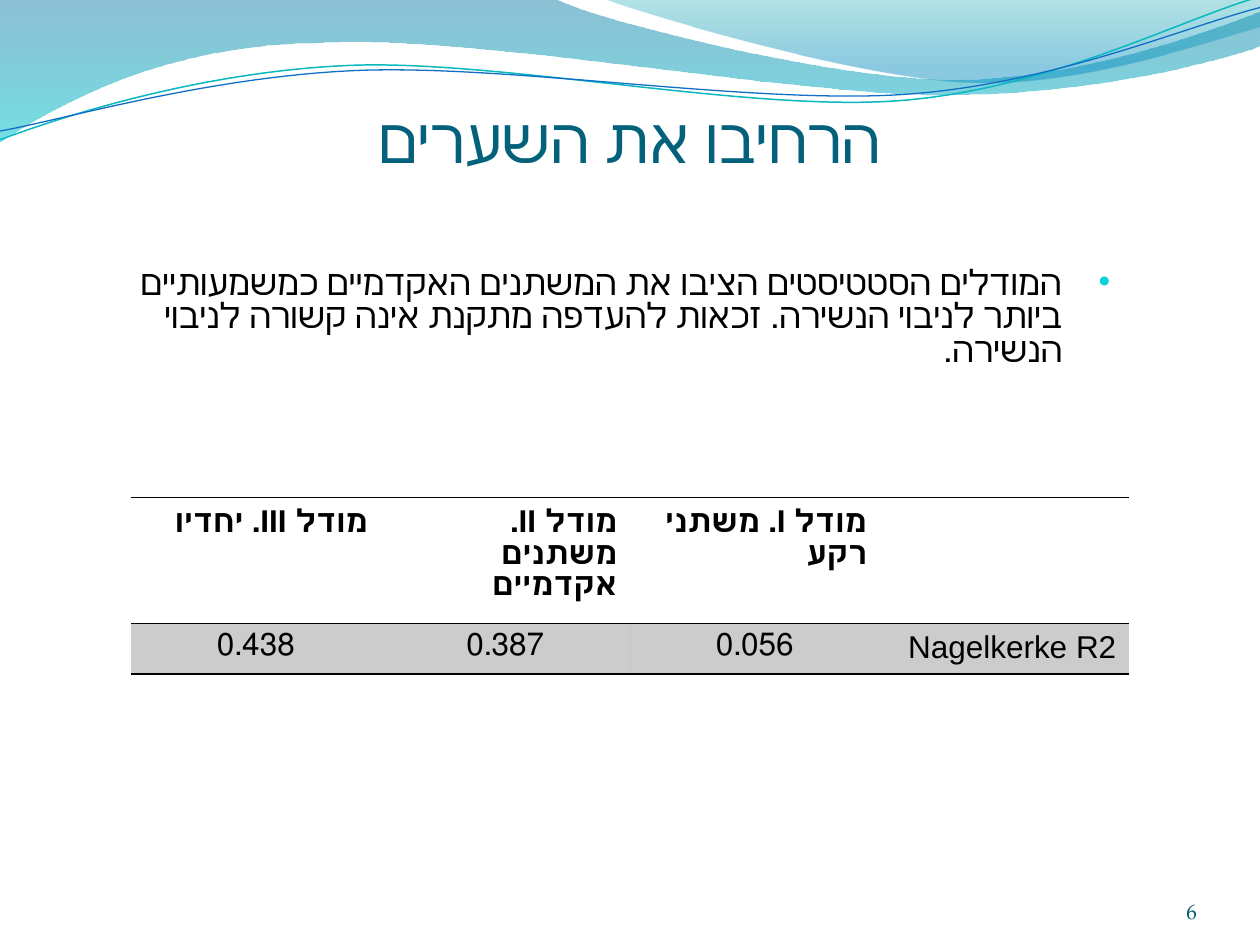
from dataclasses import dataclass

from lxml.etree import SubElement
from pptx import Presentation
from pptx.dml.color import RGBColor
from pptx.enum.text import MSO_ANCHOR, PP_ALIGN
from pptx.oxml import parse_xml
from pptx.oxml.ns import nsdecls, qn
from pptx.util import Inches, Pt


@dataclass(frozen=True)
class Theme:
    """Colours, fonts and type sizes of the slide."""
    title: str = "04617B"
    ink: str = "000000"
    bullet: str = "0BD0D9"
    number: str = "045C75"
    teal_line: str = "0AB8BF"
    blue_line: str = "0F6FC6"
    heading_font: str = "Calibri"
    body_font: str = "Arial"
    number_font: str = "TeX Gyre Pagella"
    title_size: int = 36
    body_size: int = 20
    table_size: int = 18
    number_size: int = 12


THEME = Theme()
NO_GRID_STYLE = "{2D5ABB26-0587-4C30-8999-92F81FD0307C}"

LEFT_WAVE = [
    (0, -0.01), (4.4, -0.01), (4.76, 0.17, 6.64, 0.63, 7.58, 0.63),
    (8.53, 0.63, 9.58, 0.26, 10, 0.09), (10.01, 0.36),
    (9.83, 0.44, 8.7, 0.76, 7.46, 0.75), (6.22, 0.75, 3.82, 0.28, 2.57, 0.34),
    (1.29, 0.35, 0.46, 0.83, -0.01, 1.13),
]
RIGHT_WAVE = [
    (4.79, -0.01), (5.09, 0.11, 6.82, 0.62, 7.69, 0.65),
    (8.56, 0.69, 9.61, 0.32, 10, 0.21), (10, 0),
]
TEAL_CURVE = [
    (0, 1.11), (0.48, 0.93, 1.58, 0.57, 2.77, 0.52),
    (3.95, 0.47, 5.93, 0.89, 7.13, 0.8), (8.33, 0.71, 9.38, 0.15, 9.98, -0.02),
]
BLUE_CURVE = [
    (0, 1.04), (0.47, 0.96, 1.64, 0.61, 2.83, 0.56),
    (4.03, 0.51, 5.97, 0.83, 7.17, 0.75), (8.36, 0.67, 9.41, 0.21, 10, 0.06),
]
TABLE_ROWS = [
    ["מודל III. יחדיו", "מודל II. משתנים אקדמיים", "מודל I. משתני רקע", ""],
    ["0.438", "0.387", "0.056", "Nagelkerke R2"],
]


def set_alpha(fill_element, percents):
    """Give each colour inside a fill its opacity in percent."""
    for color, percent in zip(fill_element.iter(qn("a:srgbClr")), percents):
        SubElement(color, qn("a:alpha")).set("val", str(percent * 1000))


def bend_segments(shape, segments):
    """Replace straight segments by cubic curves where control points are given."""
    lines = list(shape.element.iter(qn("a:lnTo")))
    for line, segment in zip(lines, segments[1:]):
        if len(segment) == 2:
            continue
        curve = parse_xml(f'<a:cubicBezTo {nsdecls("a")}/>')
        for x, y in zip(segment[::2], segment[1::2]):
            point = SubElement(curve, qn("a:pt"))
            point.set("x", str(Inches(x) - shape.left))
            point.set("y", str(Inches(y) - shape.top))
        line.getparent().replace(line, curve)


def add_outline(slide, segments, close):
    """Add a curved freeform behind the title."""
    anchors = [(Inches(segment[-2]), Inches(segment[-1])) for segment in segments]
    builder = slide.shapes.build_freeform(*anchors[0])
    builder.add_line_segments(anchors[1:], close=close)
    shape = builder.convert_to_shape()
    bend_segments(shape, segments)
    shape.shadow.inherit = False
    slide.shapes.title.element.addprevious(shape.element)
    return shape


def add_wave(slide, segments, stops):
    """Add a translucent wave with a vertical gradient."""
    shape = add_outline(slide, segments, True)
    shape.line.fill.background()
    shape.fill.gradient()
    shape.fill.gradient_angle = 270
    for stop, (position, color, _) in zip(shape.fill.gradient_stops, stops):
        stop.position = position
        stop.color.rgb = RGBColor.from_string(color)
    set_alpha(shape.element.spPr, [alpha for _, _, alpha in stops])


def add_curve(slide, segments, color, width):
    """Add a thin open curve."""
    shape = add_outline(slide, segments, False)
    shape.fill.background()
    shape.line.color.rgb = RGBColor.from_string(color)
    shape.line.width = Pt(width)


def format_paragraph(paragraph, alignment, font, size, color, bold=False, rtl=False):
    """Align a paragraph and format its runs."""
    paragraph.alignment = alignment
    if rtl:
        paragraph._p.get_or_add_pPr().set("rtl", "1")
    for run in paragraph.runs:
        run.font.name = font
        run.font.size = Pt(size)
        run.font.bold = bold
        run.font.color.rgb = RGBColor.from_string(color)


def set_title(slide, text):
    """Place and format the title."""
    title = slide.shapes.title
    title.left, title.top = Inches(0.5), Inches(0.75)
    title.width, title.height = Inches(9), Inches(0.89)
    title.text_frame.text = text
    title.text_frame.vertical_anchor = MSO_ANCHOR.TOP
    format_paragraph(title.text_frame.paragraphs[0], PP_ALIGN.CENTER,
                     THEME.heading_font, THEME.title_size, THEME.title)


def add_text(slide, text, left, top, width, height):
    """Add a wrapping text box and return its text frame."""
    box = slide.shapes.add_textbox(Inches(left), Inches(top), Inches(width), Inches(height))
    box.text_frame.word_wrap = True
    box.text_frame.text = text
    return box.text_frame


def add_bullet_text(slide, text):
    """Add the right-to-left bulleted statement."""
    paragraph = add_text(slide, text, 1, 2.08, 7.91, 1.58).paragraphs[0]
    paragraph.line_spacing = 0.8
    properties = paragraph._p.get_or_add_pPr()
    properties.set("marL", str(Inches(0.38)))
    properties.set("indent", str(Inches(-0.38)))
    color = SubElement(properties, qn("a:buClr"))
    SubElement(color, qn("a:srgbClr")).set("val", THEME.bullet)
    SubElement(properties, qn("a:buSzPct")).set("val", "95000")
    SubElement(properties, qn("a:buFont")).set("typeface", THEME.body_font)
    SubElement(properties, qn("a:buChar")).set("char", "•")
    format_paragraph(paragraph, PP_ALIGN.RIGHT, THEME.body_font,
                     THEME.body_size, THEME.ink, rtl=True)


def add_slide_number(slide, text):
    """Add the page number at the bottom right."""
    frame = add_text(slide, text, 7.17, 6.83, 2.33, 0.5)
    frame.margin_left = frame.margin_right = frame.margin_top = frame.margin_bottom = 0
    frame.vertical_anchor = MSO_ANCHOR.BOTTOM
    format_paragraph(frame.paragraphs[0], PP_ALIGN.RIGHT, THEME.number_font,
                     THEME.number_size, THEME.number)


def add_borders(cell):
    """Rule the top and bottom of a cell."""
    for index, tag in enumerate(("lnT", "lnB")):
        border = parse_xml(
            f'<a:{tag} {nsdecls("a")} w="{Pt(1)}"><a:solidFill>'
            f'<a:srgbClr val="{THEME.ink}"/></a:solidFill></a:{tag}>')
        cell._tc.get_or_add_tcPr().insert(index, border)


def add_model_table(slide, rows):
    """Add the table that compares the models."""
    frame = slide.shapes.add_table(len(rows), len(rows[0]), Inches(1.04), Inches(3.95),
                                   Inches(7.92), Inches(1.4))
    table = frame.table
    table.first_row = table.horz_banding = False
    next(frame._element.iter(qn("a:tableStyleId"))).text = NO_GRID_STYLE
    for row, height in zip(table.rows, (1, 0.4)):
        row.height = Inches(height)
    for row_index, values in enumerate(rows):
        header = row_index == 0
        for column_index, value in enumerate(values):
            cell = table.cell(row_index, column_index)
            cell.text_frame.text = value
            centred = not header and column_index < len(values) - 1
            format_paragraph(cell.text_frame.paragraphs[0],
                             PP_ALIGN.CENTER if centred else PP_ALIGN.RIGHT,
                             THEME.body_font, THEME.table_size, THEME.ink, header, True)
            if header:
                cell.fill.background()
            else:
                cell.fill.solid()
                cell.fill.fore_color.rgb = RGBColor.from_string(THEME.ink)
                set_alpha(cell._tc.tcPr, [20])
            add_borders(cell)


def main():
    """Build and save the slide."""
    presentation = Presentation()
    presentation.slide_width, presentation.slide_height = Inches(10), Inches(7.5)
    slide = presentation.slides.add_slide(presentation.slide_layouts[5])
    add_wave(slide, LEFT_WAVE, [(0, "0074A1", 45), (1, "00C6CF", 55)])
    add_wave(slide, RIGHT_WAVE, [(0, "00A1A9", 30), (0.8, "008BBF", 45)])
    add_curve(slide, TEAL_CURVE, THEME.teal_line, 0.85)
    add_curve(slide, BLUE_CURVE, THEME.blue_line, 0.75)
    add_slide_number(slide, "6")
    set_title(slide, "הרחיבו את השערים")
    add_bullet_text(slide, "המודלים הסטטיסטים הציבו את המשתנים האקדמיים כמשמעותיים ביותר "
                           "לניבוי הנשירה. זכאות להעדפה מתקנת אינה קשורה לניבוי הנשירה.")
    add_model_table(slide, TABLE_ROWS)
    presentation.save("out.pptx")


if __name__ == "__main__":
    main()
